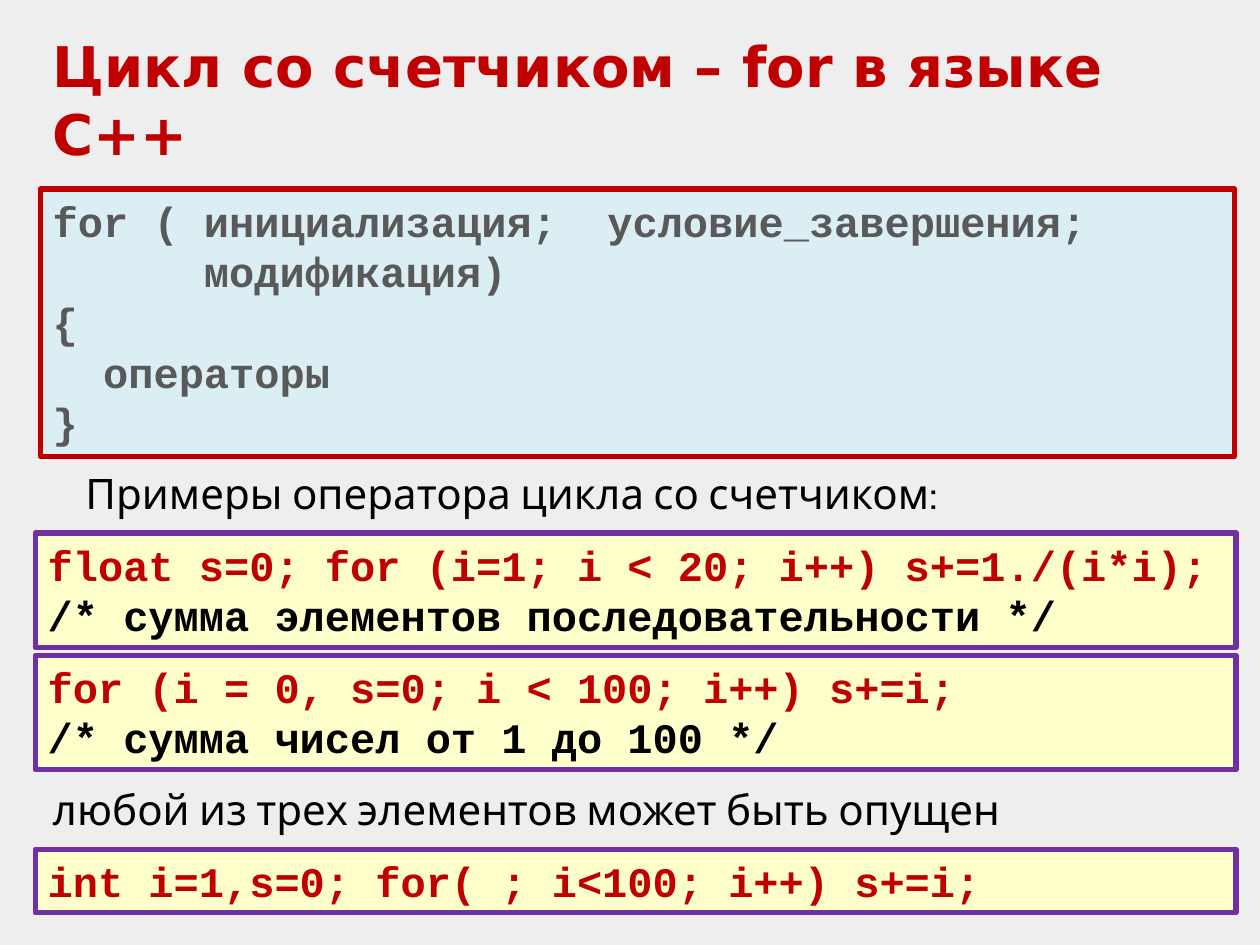
from pptx import Presentation
from pptx.dml.color import RGBColor
from pptx.enum.shapes import MSO_SHAPE as Shape
from pptx.enum.text import MSO_ANCHOR as Anchor, PP_ALIGN as Align
from pptx.util import Inches, Pt

WIDTH, HEIGHT = Inches(10), Inches(7.5)
COLUMN, ROW = WIDTH / 100, HEIGHT / 100
LINE_ROWS, MARGIN_ROWS = 5.4, 1.33
RED, BLACK, GREY, PURPLE = "C00000", "000000", "595959", "7030A0"


def color(value):
    return RGBColor.from_string(value)


def place(box):
    left, top, width, height = box
    return [int(left * COLUMN), int(top * ROW), int(width * COLUMN), int(height * ROW)]


def code_box(left, top, width, line_count):
    return left, top, width, MARGIN_ROWS + LINE_ROWS * line_count


def write(frame, text, size=24, font="Cabin", colors=(BLACK,), bold=False, anchor=Anchor.TOP):
    frame.word_wrap = True
    frame.vertical_anchor = anchor
    for index, line in enumerate(text.split("\n")):
        paragraph = frame.add_paragraph() if index else frame.paragraphs[0]
        paragraph.alignment = Align.LEFT
        run = paragraph.add_run()
        run.text = line
        run.font.size = Pt(size)
        run.font.name = font
        run.font.bold = bold
        run.font.color.rgb = color(colors[min(index, len(colors) - 1)])


def add_title(slide, box, text):
    title = slide.shapes.add_textbox(*place(box))
    write(title.text_frame, text, size=32, font="DejaVu Sans", colors=(RED,), bold=True,
          anchor=Anchor.BOTTOM)


def add_caption(slide, box, text):
    caption = slide.shapes.add_textbox(*place(box))
    write(caption.text_frame, text)


def add_code(slide, box, text, fill, border, colors):
    panel = slide.shapes.add_shape(Shape.RECTANGLE, *place(box))
    panel.shadow.inherit = False
    panel.fill.solid()
    panel.fill.fore_color.rgb = color(fill)
    panel.line.color.rgb = color(border)
    panel.line.width = Pt(3)
    write(panel.text_frame, text, font="Courier New", colors=colors, bold=True)


def add_syntax(slide, box, text):
    add_code(slide, box, text, "DBEEF4", RED, (GREY,))


def add_example(slide, box, text):
    add_code(slide, box, text, "FFFFCC", PURPLE, (RED, BLACK))


def main():
    presentation = Presentation()
    presentation.slide_width, presentation.slide_height = WIDTH, HEIGHT
    slide = presentation.slides.add_slide(presentation.slide_layouts[6])
    slide.background.fill.solid()
    slide.background.fill.fore_color.rgb = color("EEEEEE")

    add_title(slide, (3.2, 2.53, 91.3, 15.73), "Цикл со счетчиком – for в языке C++")
    syntax = """for ( инициализация;  условие_завершения;
      модификация)
{
  операторы
}"""
    add_syntax(slide, code_box(3.2, 20, 94.8, 5), syntax)

    add_caption(slide, (5.8, 48.8, 90.2, 6.67), "Примеры оператора цикла со счетчиком:")
    add_caption(slide, (3.2, 82.27, 89.8, 6.67), "любой из трех элементов может быть опущен")

    examples = [
        (56.4, "float s=0; for (i=1; i < 20; i++) s+=1./(i*i);\n"
               "/* сумма элементов последовательности */"),
        (69.33, "for (i = 0, s=0; i < 100; i++) s+=i;\n/* сумма чисел от 1 до 100 */"),
        (89.87, "int i=1,s=0; for( ; i<100; i++) s+=i;"),
    ]
    for top, text in examples:
        add_example(slide, code_box(2.8, top, 95.3, len(text.split("\n"))), text)

    presentation.save("out.pptx")


if __name__ == "__main__":
    main()
